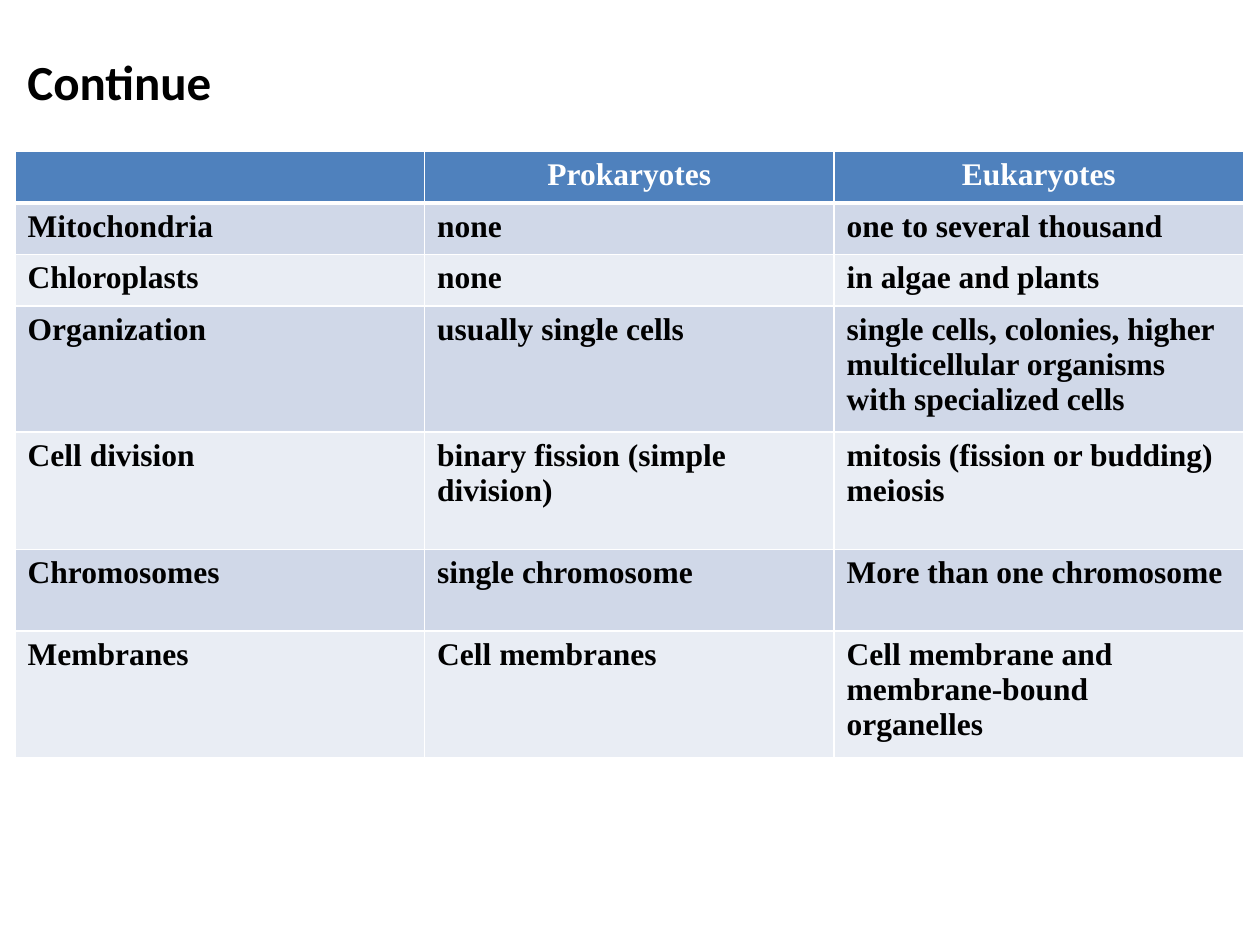
from dataclasses import dataclass

from lxml import etree
from pptx import Presentation
from pptx.dml.color import RGBColor
from pptx.enum.text import MSO_ANCHOR, PP_ALIGN
from pptx.oxml.ns import qn
from pptx.util import Inches, Pt


@dataclass(frozen=True)
class Theme:
    title_font: str = "Calibri"
    table_font: str = "Times New Roman"
    title_size: int = 28
    table_size: int = 18
    black: str = "000000"
    white: str = "FFFFFF"
    header: str = "4F81BD"
    bands: tuple = ("D0D8E8", "E9EDF4")


THEME = Theme()

ROWS = [
    ("", "Prokaryotes", "Eukaryotes"),
    ("Mitochondria", "none", "one to several thousand"),
    ("Chloroplasts", "none", "in algae and plants"),
    ("Organization", "usually single cells",
     "single cells, colonies, higher multicellular organisms with specialized cells"),
    ("Cell division", "binary fission (simple division)",
     "mitosis (fission or budding)\nmeiosis"),
    ("Chromosomes", "single chromosome", "More than one chromosome"),
    ("Membranes", "Cell membranes", "Cell membrane and membrane-bound organelles"),
]
ROW_HEIGHTS = [0.41, 0.41, 0.41, 0.93, 0.93, 0.65, 0.93]
COLUMN_WIDTH = 3.25


def style_text(frame, name, size, color, align=PP_ALIGN.LEFT):
    for para in frame.paragraphs:
        para.alignment = align
        para.font.name = name
        para.font.size = Pt(size)
        para.font.bold = True
        para.font.color.rgb = RGBColor.from_string(color)


def set_borders(cell, bottom_width, top_width):
    """Draw white cell borders; they come before the fill in the cell properties."""
    properties = cell._tc.get_or_add_tcPr()
    widths = {"a:lnL": 1, "a:lnR": 1, "a:lnT": top_width, "a:lnB": bottom_width}
    for index, (tag, width) in enumerate(widths.items()):
        line = etree.Element(qn(tag), w=str(Pt(width)))
        fill = etree.SubElement(line, qn("a:solidFill"))
        etree.SubElement(fill, qn("a:srgbClr"), val=THEME.white)
        properties.insert(index, line)


deck = Presentation()
deck.slide_width, deck.slide_height = Inches(10), Inches(7.5)
page = deck.slides.add_slide(deck.slide_layouts[6])

# Title
title = page.shapes.add_textbox(Inches(0.12), Inches(0.3), Inches(9.76), Inches(0.69))
title.text_frame.word_wrap = True
title.text_frame.vertical_anchor = MSO_ANCHOR.MIDDLE
title.text_frame.text = "Continue"
style_text(title.text_frame, THEME.title_font, THEME.title_size, THEME.black)

# Comparison table
table = page.shapes.add_table(
    len(ROWS), len(ROWS[0]), Inches(0.12), Inches(1.2),
    Inches(COLUMN_WIDTH * len(ROWS[0])), Inches(sum(ROW_HEIGHTS))).table
for column in table.columns:
    column.width = Inches(COLUMN_WIDTH)

for row_index, (texts, height) in enumerate(zip(ROWS, ROW_HEIGHTS)):
    table.rows[row_index].height = Inches(height)
    is_header = row_index == 0
    background = THEME.header if is_header else THEME.bands[(row_index - 1) % 2]
    for column_index, text in enumerate(texts):
        cell = table.cell(row_index, column_index)
        cell.text = text
        cell.fill.solid()
        cell.fill.fore_color.rgb = RGBColor.from_string(background)
        set_borders(cell, 3 if is_header else 1, 3 if row_index == 1 else 1)
        style_text(cell.text_frame, THEME.table_font, THEME.table_size,
                   THEME.white if is_header else THEME.black,
                   PP_ALIGN.CENTER if is_header else PP_ALIGN.LEFT)

deck.save("out.pptx")
